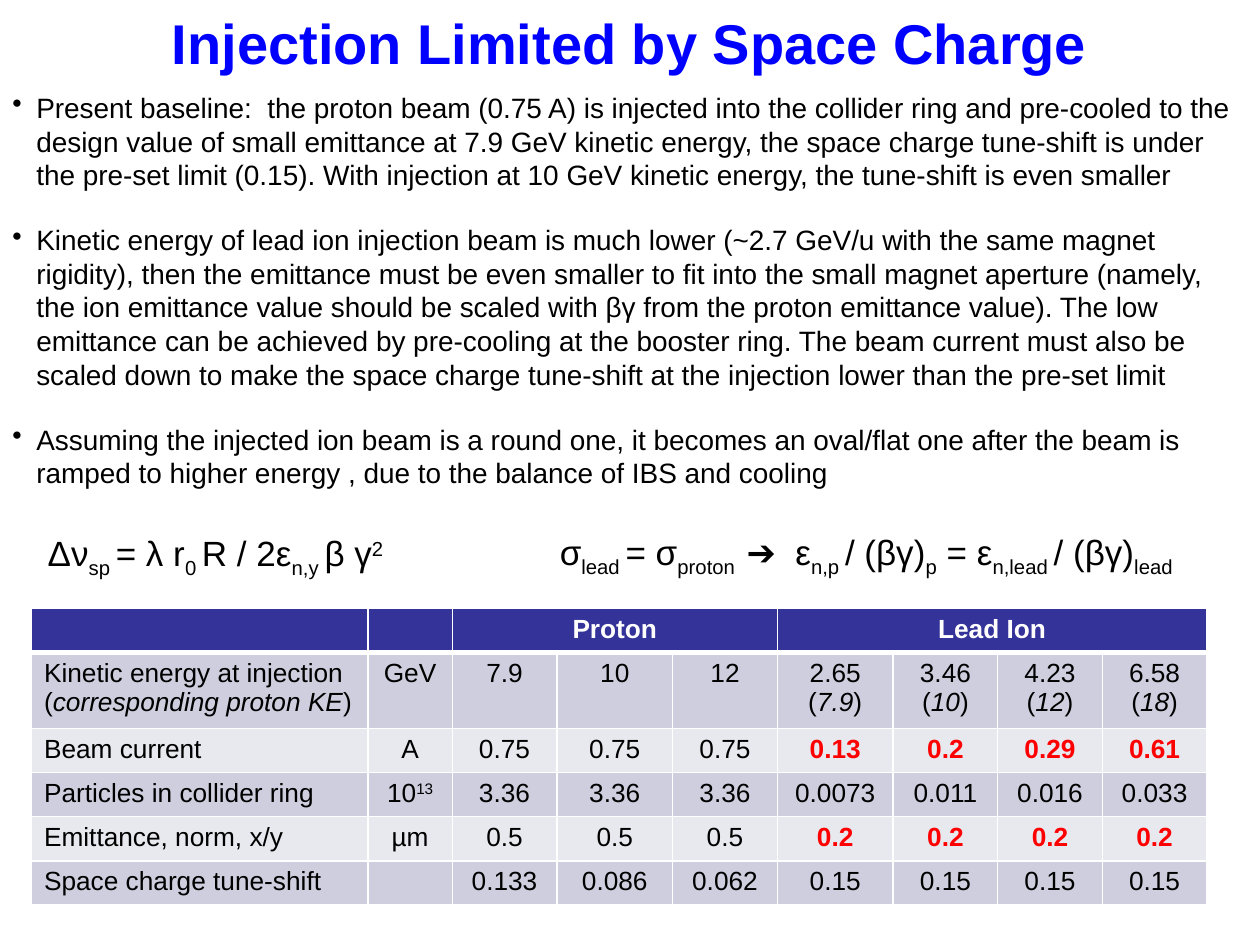
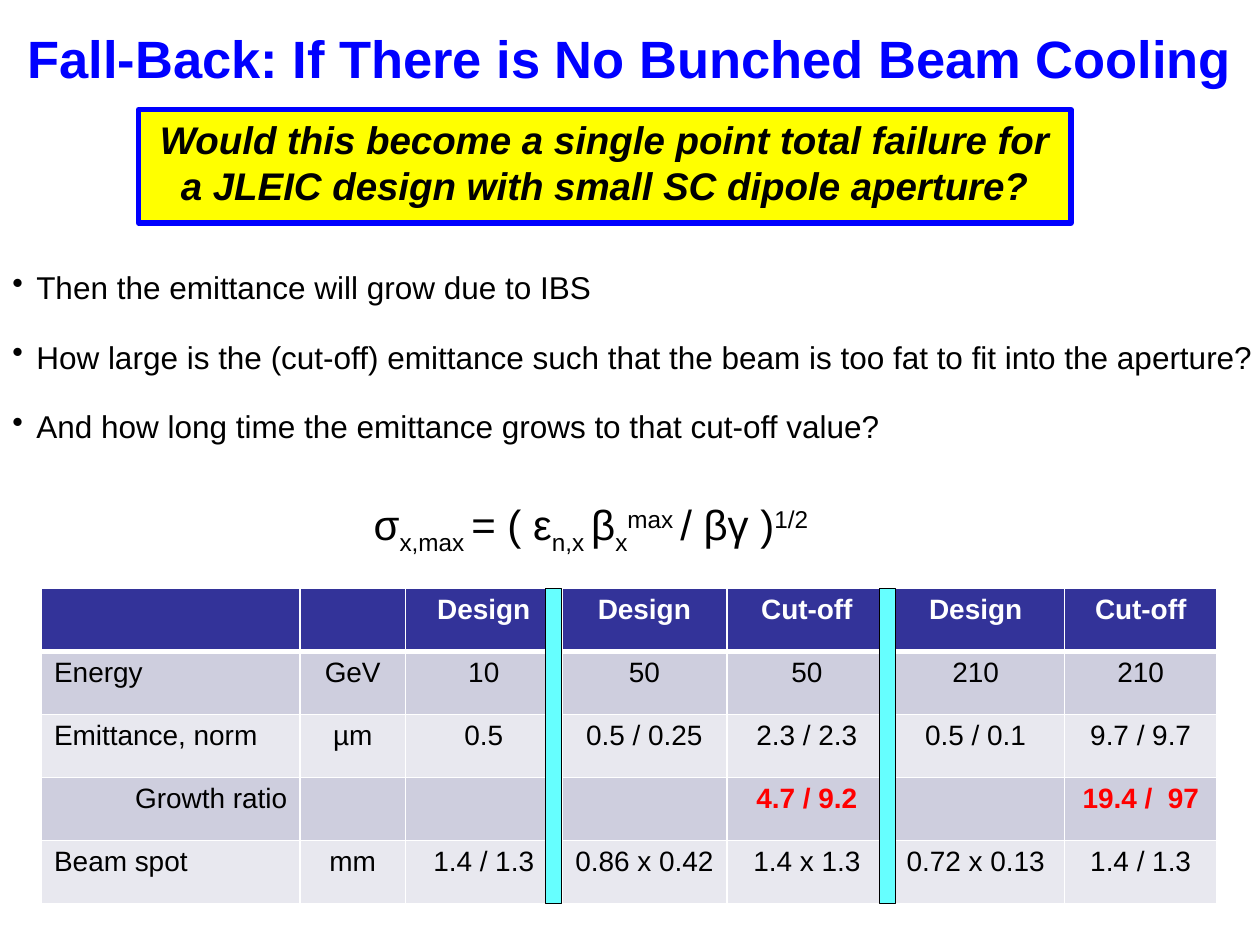
from lxml import etree
from pptx import Presentation
from pptx.dml.color import RGBColor
from pptx.enum.shapes import MSO_SHAPE
from pptx.enum.text import MSO_ANCHOR, PP_ALIGN
from pptx.oxml.ns import qn
from pptx.util import Inches, Pt

LEFT, CENTER, RIGHT = PP_ALIGN.LEFT, PP_ALIGN.CENTER, PP_ALIGN.RIGHT
TOP, MIDDLE = MSO_ANCHOR.TOP, MSO_ANCHOR.MIDDLE
RECTANGLE = MSO_SHAPE.RECTANGLE

BLACK = RGBColor(0x00, 0x00, 0x00)
WHITE = RGBColor(0xFF, 0xFF, 0xFF)
BLUE = RGBColor(0x00, 0x00, 0xFF)
RED = RGBColor(0xFF, 0x00, 0x00)
YELLOW = RGBColor(0xFF, 0xFF, 0x00)
CYAN = RGBColor(0x66, 0xFF, 0xFF)
NAVY = RGBColor(0x33, 0x33, 0x99)
DARK_BAND = RGBColor(0xCE, 0xCE, 0xDE)
LIGHT_BAND = RGBColor(0xE8, 0xE8, 0xEF)

FONT = "Arial"
SUB, SUP, ITALIC = "sub", "sup", "italic"
BASELINES = {SUB: "-25000", SUP: "30000"}


def add_bullet(paragraph):
    properties = paragraph._p.get_or_add_pPr()
    properties.set("marL", str(Inches(0.19)))
    properties.set("indent", str(-Inches(0.19)))
    etree.SubElement(properties, qn("a:buChar"), char="•")


def write(frame, paragraphs, size, color=BLACK, bold=False, italic=False,
          align=LEFT, anchor=TOP, bullets=False, gap=0):
    frame.word_wrap = True
    frame.vertical_anchor = anchor
    for index, parts in enumerate(paragraphs):
        paragraph = frame.add_paragraph() if index else frame.paragraphs[0]
        if bullets:
            add_bullet(paragraph)
        paragraph.alignment = align
        if index and gap:
            paragraph.space_before = Pt(gap)
        for part in [parts] if isinstance(parts, str) else parts:
            text, style = (part, None) if isinstance(part, str) else part
            if not text:
                end = etree.SubElement(paragraph._p, qn("a:endParaRPr"))
                end.set("sz", str(size * 100))
                continue
            run = paragraph.add_run()
            run.text = text
            font = run.font
            font.name, font.size = FONT, Pt(size)
            font.bold, font.italic = bold, italic or style == ITALIC
            font.color.rgb = color
            if style in BASELINES:
                run._r.get_or_add_rPr().set("baseline", BASELINES[style])


def add_text(slide, left, top, width, height, paragraphs, size, **style):
    box = slide.shapes.add_textbox(
        Inches(left), Inches(top), Inches(width), Inches(height))
    write(box.text_frame, paragraphs, size, **style)


def add_title(slide, title, top, height, size):
    add_text(slide, 0, top, 10, height, [title], size,
             color=BLUE, bold=True, align=CENTER, anchor=MIDDLE)


def add_formula(slide, left, top, width, height, parts, size=20):
    add_text(slide, left, top, width, height, [parts], size, align=CENTER)


def add_rectangle(slide, left, top, width, height, fill, line, line_width):
    rectangle = slide.shapes.add_shape(
        RECTANGLE, Inches(left), Inches(top), Inches(width), Inches(height))
    rectangle.shadow.inherit = False
    rectangle.fill.solid()
    rectangle.fill.fore_color.rgb = fill
    rectangle.line.color.rgb = line
    rectangle.line.width = Pt(line_width)
    return rectangle


def set_borders(cell, row):
    properties = cell._tc.get_or_add_tcPr()
    widths = {"L": 1, "R": 1, "T": 3 if row == 1 else 1, "B": 1 if row else 3}
    for side, width in widths.items():
        line = etree.SubElement(properties, qn(f"a:ln{side}"), w=str(Pt(width)))
        fill = etree.SubElement(line, qn("a:solidFill"))
        etree.SubElement(fill, qn("a:srgbClr"), val=str(WHITE))


def add_data_table(slide, left, top, column_widths, row_heights, rows, size,
                   merges=(), red_cells=(), right_cells=()):
    table = slide.shapes.add_table(
        len(rows), len(column_widths), Inches(left), Inches(top),
        Inches(sum(column_widths)), Inches(sum(row_heights))).table
    for column, width in zip(table.columns, column_widths):
        column.width = Inches(width)
    for table_row, height in zip(table.rows, row_heights):
        table_row.height = Inches(height)
    for first, last in merges:
        table.cell(0, first).merge(table.cell(0, last))

    for r, values in enumerate(rows):
        for c, value in enumerate(values):
            cell = table.cell(r, c)
            set_borders(cell, r)
            cell.fill.solid()
            cell.fill.fore_color.rgb = (
                NAVY if r == 0 else DARK_BAND if r % 2 else LIGHT_BAND)
            is_red = (r, c) in red_cells
            align = RIGHT if (r, c) in right_cells else CENTER if c else LEFT
            write(cell.text_frame,
                  [[value]] if isinstance(value, str) else value, size,
                  color=WHITE if r == 0 else RED if is_red else BLACK,
                  bold=r == 0 or is_red, align=align)


def with_note(value, note):
    return [value, ["(", (note, ITALIC), ")"]]


def build_space_charge(slide):
    add_title(slide, "Injection Limited by Space Charge", 0, 0.67, 32)
    add_text(slide, 0, 0.67, 10, 3.33, [
        "Present baseline:  the proton beam (0.75 A) is injected into the "
        "collider ring and pre-cooled to the design value of small emittance "
        "at 7.9 GeV kinetic energy, the space charge tune-shift is under the "
        "pre-set limit (0.15). With injection at 10 GeV kinetic energy, the "
        "tune-shift is even smaller",
        "Kinetic energy of lead ion injection beam is much lower (~2.7 GeV/u "
        "with the same magnet rigidity), then the emittance must be even "
        "smaller to fit into the small magnet aperture (namely, the ion "
        "emittance value should be scaled with βγ from the proton emittance "
        "value). The low emittance can be achieved by pre-cooling at the "
        "booster ring. The beam current must also be scaled down to make the "
        "space charge tune-shift at the injection lower than the pre-set limit",
        "Assuming the injected ion beam is a round one, it becomes an "
        "oval/flat one after the beam is ramped to higher energy , due to the "
        "balance of IBS and cooling",
    ], 16, bullets=True, gap=18)

    add_formula(slide, 0.17, 4.17, 3.08, 0.44, [
        "Δν", ("sp ", SUB), "= λ r", ("0 ", SUB), "R / 2ε", ("n,y ", SUB),
        "β γ", ("2", SUP)])
    add_formula(slide, 4.04, 4.16, 5.67, 0.44, [
        "σ", ("lead ", SUB), "= σ", ("proton  ", SUB), "➔  ε", ("n,p ", SUB),
        "/ (βγ)", ("p", SUB), " = ε", ("n,lead ", SUB), "/ (βγ)",
        ("lead", SUB)])

    lead_columns = range(5, 9)
    rows = [
        ["", "", "Proton", "", "", "Lead Ion", "", "", ""],
        [with_note("Kinetic energy at injection", "corresponding proton KE"),
         "GeV", "7.9", "10", "12", with_note("2.65", "7.9"),
         with_note("3.46", "10"), with_note("4.23", "12"),
         with_note("6.58", "18")],
        ["Beam current", "A", *["0.75"] * 3, "0.13", "0.2", "0.29", "0.61"],
        ["Particles in collider ring", [["10", ("13", SUP)]], *["3.36"] * 3,
         "0.0073", "0.011", "0.016", "0.033"],
        ["Emittance, norm, x/y", "µm", *["0.5"] * 3, *["0.2"] * 4],
        ["Space charge tune-shift", "", "0.133", "0.086", "0.062",
         *["0.15"] * 4],
    ]
    add_data_table(
        slide, 0.25, 4.83,
        [2.67, 0.67, 0.83, 0.92, 0.83, 0.92, 0.83, 0.83, 0.83],
        [0.35, 0.6] + [0.35] * 4, rows, 15, merges=[(2, 4), (5, 8)],
        red_cells=[(r, c) for r in (2, 4) for c in lead_columns])


def build_no_cooling(slide):
    add_title(slide, "Fall-Back: If There is No Bunched Beam Cooling",
              0.08, 0.75, 30)
    add_text(slide, 0, 2.08, 10.17, 1.67, [
        "Then the emittance will grow due to IBS",
        "How large is the (cut-off) emittance such that the beam is too fat "
        "to fit into the aperture?",
        "And how long time the emittance grows to that cut-off value?",
    ], 18, bullets=True, gap=18)

    table_top, row_heights = 4.67, [0.5] * 5
    rows = [
        ["", "", "Design", "Design", "Cut-off", "Design", "Cut-off"],
        ["Energy", "GeV", "10", "50", "50", "210", "210"],
        ["Emittance, norm", "µm", "0.5", "0.5 / 0.25", "2.3 / 2.3",
         "0.5 / 0.1", "9.7 / 9.7"],
        ["Growth ratio", "", "", "", "4.7 / 9.2", "", "19.4 /  97"],
        ["Beam spot", "mm", "1.4 / 1.3", "0.86 x 0.42", "1.4 x 1.3",
         "0.72 x 0.13", "1.4 / 1.3"],
    ]
    add_data_table(slide, 0.33, table_top,
                   [2.05, 0.84, 1.24, 1.31, 1.27, 1.41, 1.21],
                   row_heights, rows, 16,
                   red_cells=[(3, 4), (3, 6)], right_cells=[(3, 0)])
    for divider_left in (4.33, 6.98):
        add_rectangle(slide, divider_left, table_top, 0.13, sum(row_heights),
                      CYAN, BLACK, 0.75)

    add_formula(slide, 1.94, 3.91, 5.5, 0.5, [
        "σ", ("x,max ", SUB), "= ( ε", ("n,x ", SUB), "β", ("x", SUB),
        ("max ", SUP), "/ βγ )", ("1/2", SUP)], size=24)
    question = add_rectangle(slide, 1.1, 0.87, 7.4, 0.9, YELLOW, BLUE, 3)
    write(question.text_frame, [
        "Would this become a single point total failure for a JLEIC design "
        "with small SC dipole aperture?"
    ], 22, bold=True, italic=True, align=CENTER)


def main():
    deck = Presentation()
    deck.slide_width, deck.slide_height = Inches(10), Inches(7.5)
    blank = deck.slide_layouts[6]
    for build in (build_space_charge, build_no_cooling):
        build(deck.slides.add_slide(blank))
    deck.save("out.pptx")


if __name__ == "__main__":
    main()
